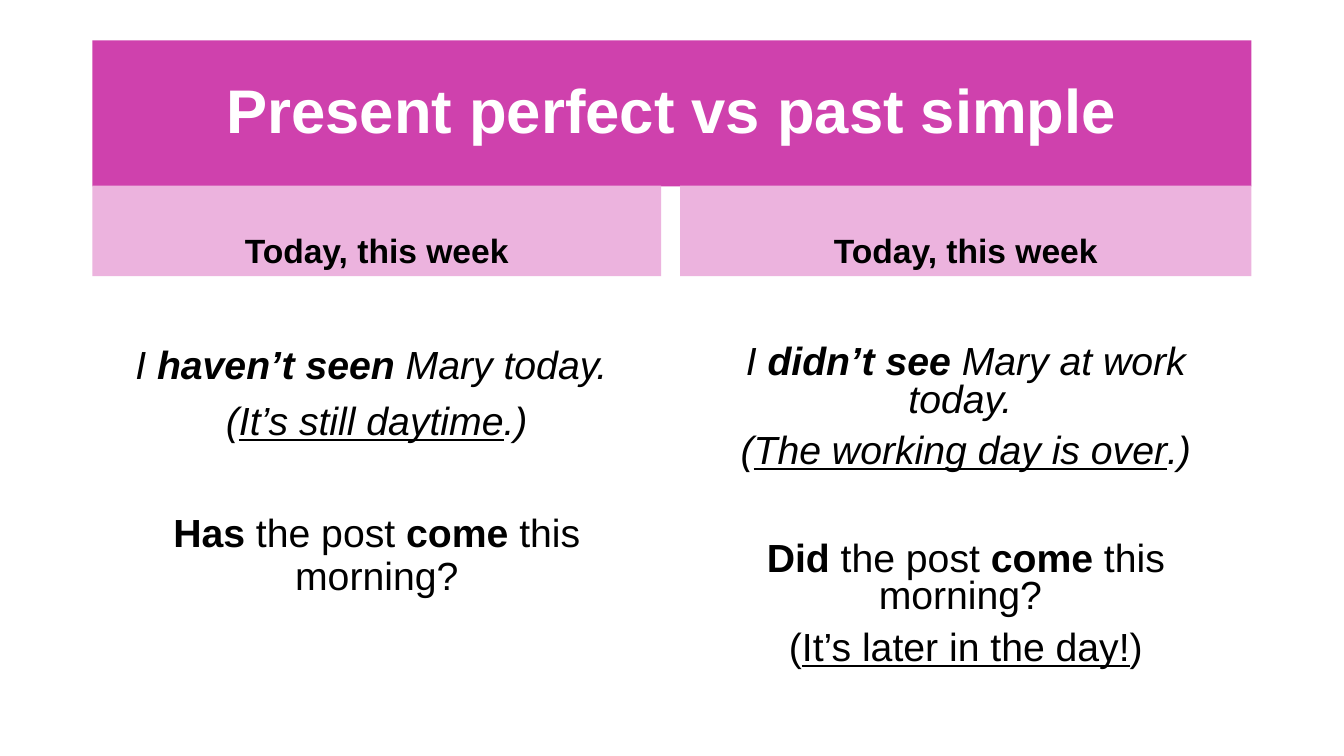
from dataclasses import dataclass

from pptx import Presentation
from pptx.dml.color import RGBColor
from pptx.enum.text import MSO_ANCHOR, PP_ALIGN
from pptx.util import Cm, Pt

FONT = "Arial"
WHITE, BLACK, MAGENTA, PINK = "FFFFFF", "000000", "CF41AD", "ECB3DE"
LEFT = 2.33
HEADING_TOP, HEADING_HEIGHT = 4.68, 2.28
EXAMPLES_TOP = HEADING_TOP + HEADING_HEIGHT


@dataclass
class Span:
    text: str
    bold: bool = False
    underline: bool = False


@dataclass
class Line:
    spans: list[Span]
    italic: bool = False
    space_before: float = 10


@dataclass
class Column:
    left: float
    width: float
    line_spacing: float
    heading: str
    examples: list[Line]


COLUMNS = [
    Column(LEFT, 14.33, 0.9, "Today, this week", [
        Line([Span("I "), Span("haven’t seen ", bold=True), Span("Mary today. ")],
             italic=True, space_before=0),
        Line([Span("("), Span("It’s still daytime", underline=True), Span(".)")],
             italic=True),
        Line([Span("Has", bold=True), Span(" the post "), Span("come", bold=True),
              Span(" this morning?")], space_before=50),
    ]),
    Column(17.14, 14.4, 0.8, "Today, this week", [
        Line([Span("I "), Span("didn’t see ", bold=True),
              Span("Mary at work today. ")], italic=True, space_before=0),
        Line([Span("("), Span("The working day is over", underline=True),
              Span(".)")], italic=True),
        Line([Span("Did", bold=True), Span(" the post "), Span("come", bold=True),
              Span(" this morning? ")], space_before=50),
        Line([Span("("), Span("It’s later in the day!", underline=True),
              Span(")")]),
    ]),
]


def color(value: str) -> RGBColor:
    return RGBColor.from_string(value)


def add_box(page, left: float, top: float, width: float, height: float,
            anchor: MSO_ANCHOR, fill: str | None = None):
    box = page.shapes.add_textbox(Cm(left), Cm(top), Cm(width), Cm(height))
    if fill:
        box.fill.solid()
        box.fill.fore_color.rgb = color(fill)
    box.text_frame.word_wrap = True
    box.text_frame.vertical_anchor = anchor
    return box


def format_paragraph(para, size: float, font_color: str, line_spacing: float) -> None:
    para.alignment = PP_ALIGN.CENTER
    para.line_spacing = line_spacing
    para.font.name = FONT
    para.font.size = Pt(size)
    para.font.color.rgb = color(font_color)


def add_banner(page, text: str, left: float, top: float, width: float, height: float,
               anchor: MSO_ANCHOR, fill: str, size: float, font_color: str) -> None:
    """Add a filled bar with one bold, centred line."""
    box = add_box(page, left, top, width, height, anchor, fill)
    para = box.text_frame.paragraphs[0]
    para.text = text
    format_paragraph(para, size, font_color, 0.9)
    para.font.bold = True


def add_examples(page, column: Column) -> None:
    box = add_box(page, column.left, EXAMPLES_TOP, column.width, 10.24, MSO_ANCHOR.TOP)
    frame = box.text_frame
    frame.margin_top = Cm(1.74)
    for index, line in enumerate(column.examples):
        para = frame.add_paragraph() if index else frame.paragraphs[0]
        format_paragraph(para, 28, BLACK, column.line_spacing)
        para.space_before = Pt(line.space_before)
        para.font.italic = line.italic
        for span in line.spans:
            run = para.add_run()
            run.text = span.text
            if span.bold:
                run.font.bold = True
            if span.underline:
                run.font.underline = True


def main() -> None:
    deck = Presentation()
    deck.slide_width, deck.slide_height = Cm(33.87), Cm(19.05)
    page = deck.slides.add_slide(deck.slide_layouts[6])
    add_banner(page, "Present perfect vs past simple", LEFT, 1.02, 29.21, 3.68,
               MSO_ANCHOR.MIDDLE, MAGENTA, 44, WHITE)
    for column in COLUMNS:
        add_banner(page, column.heading, column.left, HEADING_TOP, column.width,
                   HEADING_HEIGHT, MSO_ANCHOR.BOTTOM, PINK, 24, BLACK)
        add_examples(page, column)
    deck.save("out.pptx")


if __name__ == "__main__":
    main()
